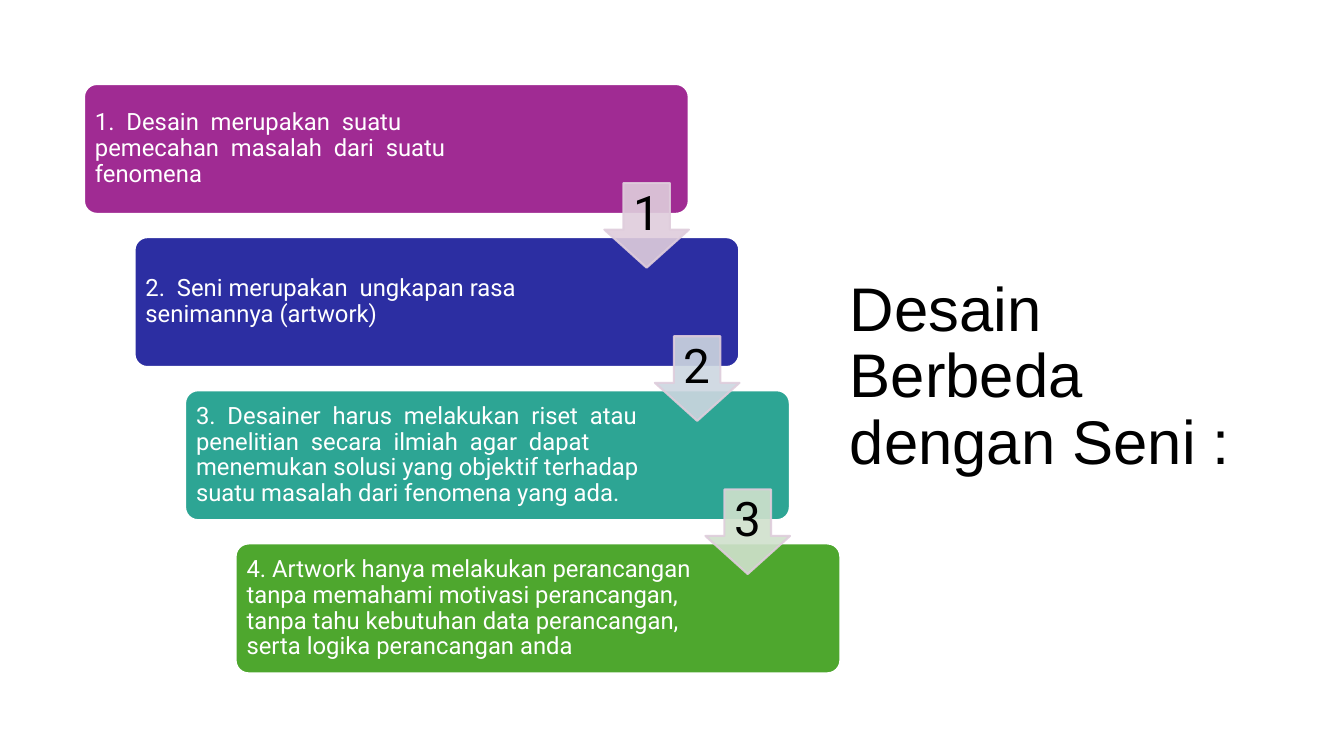
"""Build a slide of four stepped cards, linked by numbered arrows, beside a title."""
import pptx
import pptx.dml.color
import pptx.enum.shapes
import pptx.enum.text
import pptx.oxml
import pptx.oxml.ns
import pptx.util

Pt = pptx.util.Pt
RGBColor = pptx.dml.color.RGBColor
MSO_SHAPE = pptx.enum.shapes.MSO_SHAPE
PP_ALIGN = pptx.enum.text.PP_ALIGN

WHITE = RGBColor(0xFF, 0xFF, 0xFF)
BLACK = RGBColor(0x00, 0x00, 0x00)
PURPLE = RGBColor(0xA0, 0x2B, 0x93)
BLUE = RGBColor(0x2C, 0x2E, 0xA2)
TEAL = RGBColor(0x2D, 0xA5, 0x94)
GREEN = RGBColor(0x4E, 0xA7, 0x2E)
PALE_PINK = RGBColor(0xDF, 0xCD, 0xDC)
PALE_BLUE = RGBColor(0xCD, 0xD6, 0xE0)
PALE_GREEN = RGBColor(0xD0, 0xE1, 0xCD)

STEP_X, STEP_Y = 36.1, 109.4
ARROW_SIZE = 60.4

CARDS = [
    ("1.  Desain  merupakan  suatu  pemecahan  masalah  dari  suatu  fenomena", PURPLE, 322),
    ("2.  Seni merupakan  ungkapan rasa  senimannya (artwork)", BLUE, 330.5),
    ("3.  Desainer  harus  melakukan  riset  atau  penelitian  secara  ilmiah  agar  dapat "
     "menemukan solusi yang objektif terhadap suatu masalah dari fenomena yang ada.", TEAL, 330.5),
    ("4. Artwork hanya melakukan perancangan tanpa memahami motivasi perancangan, "
     "tanpa tahu kebutuhan data perancangan, serta logika perancangan anda", GREEN, 330.5),
]


def add_shape(kind, left, top, width, height, fill, line, adjustments):
    shape = slide.shapes.add_shape(kind, Pt(left), Pt(top), Pt(width), Pt(height))
    shape.shadow.inherit = False
    shape.fill.solid()
    shape.fill.fore_color.rgb = fill
    shape.line.color.rgb = line
    shape.line.width = Pt(1.5)
    for index, value in enumerate(adjustments):
        shape.adjustments[index] = value
    return shape


def add_text(text, left, top, width, height, inset, font_name, size, color, alignment):
    box = slide.shapes.add_textbox(Pt(left), Pt(top), Pt(width), Pt(height))
    frame = box.text_frame
    frame.word_wrap = True
    frame.vertical_anchor = pptx.enum.text.MSO_ANCHOR.MIDDLE
    frame.margin_left = frame.margin_right = Pt(inset)
    frame.margin_top = frame.margin_bottom = Pt(inset)
    frame.text = text
    paragraph = frame.paragraphs[0]
    paragraph.alignment = alignment
    paragraph.line_spacing = 0.9
    font = paragraph.runs[0].font
    font.name = font_name
    font.size = Pt(size)
    font.color.rgb = color


presentation = pptx.Presentation()
presentation.slide_width = Pt(960)
presentation.slide_height = Pt(540)
slide = presentation.slides.add_slide(presentation.slide_layouts[6])

add_text("Desain Berbeda dengan Seni :", 600, 120, 300, 300, 7.2,
         "Arial", 44, BLACK, PP_ALIGN.LEFT)

for row, (text, color, text_width) in enumerate(CARDS):
    left, top = 60 + row * STEP_X, 60 + row * STEP_Y
    add_shape(MSO_SHAPE.ROUNDED_RECTANGLE, left, top, 432, 92.8, color, WHITE, [0.1])
    add_text(text, left + 2.7, top + 2.7, text_width, 87.4, 5.1,
             "Roboto", 17, WHITE, PP_ALIGN.LEFT)

for row, color in enumerate([PALE_PINK, PALE_BLUE, PALE_GREEN]):
    left, top = 431.7 + row * STEP_X, 130.8 + row * STEP_Y
    arrow = add_shape(MSO_SHAPE.DOWN_ARROW, left, top, ARROW_SIZE, ARROW_SIZE,
                      color, PALE_PINK, [0.55, 0.45])
    for color_element in arrow._element.spPr.iter(pptx.oxml.ns.qn("a:srgbClr")):
        alpha = pptx.oxml.parse_xml(f'<a:alpha {pptx.oxml.ns.nsdecls("a")} val="90000"/>')
        color_element.append(alpha)
    add_text(str(row + 1), left + 13.6, top, 33.2, 45.4, 3.4,
             "Roboto", 34, BLACK, PP_ALIGN.CENTER)

presentation.save("out.pptx")
